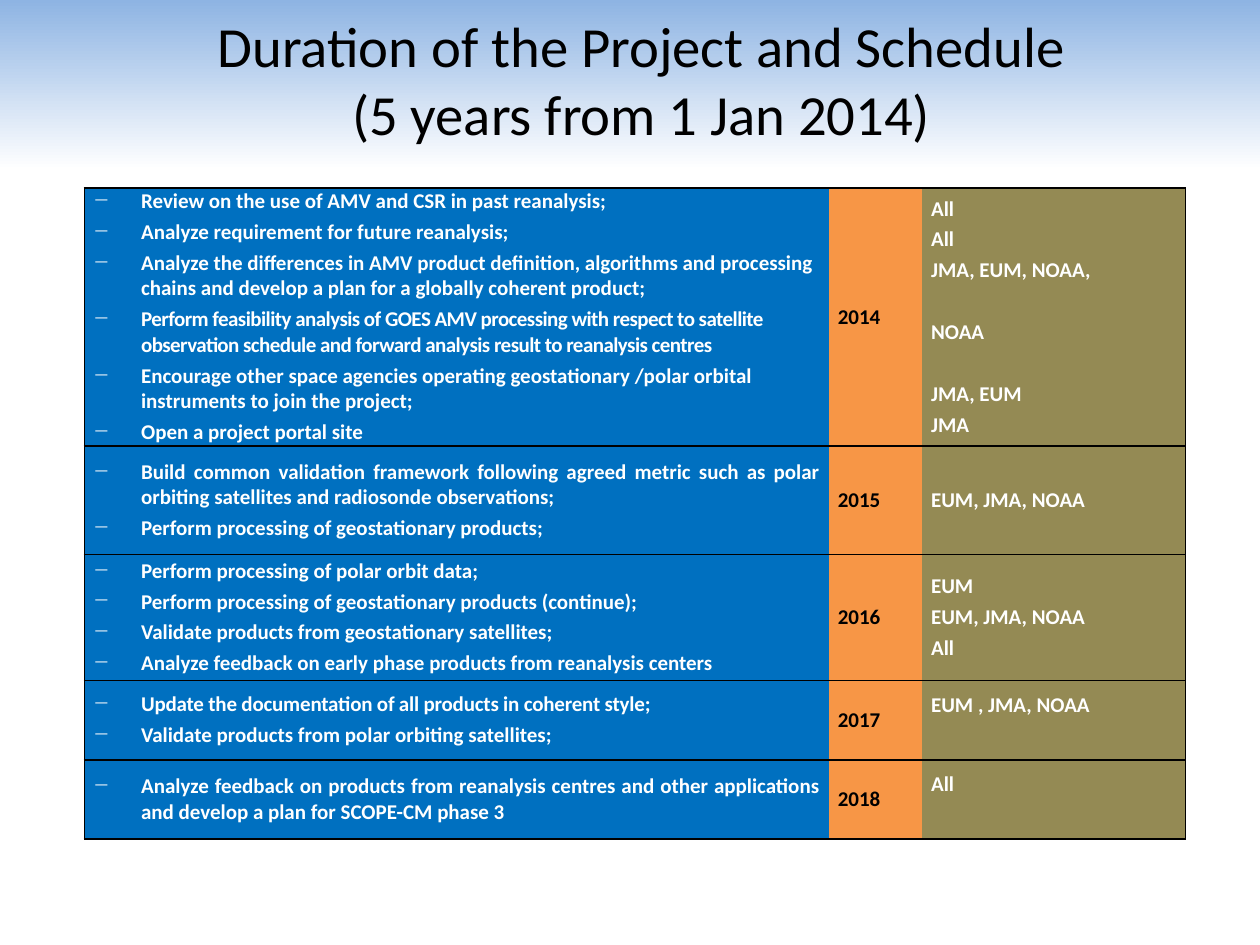
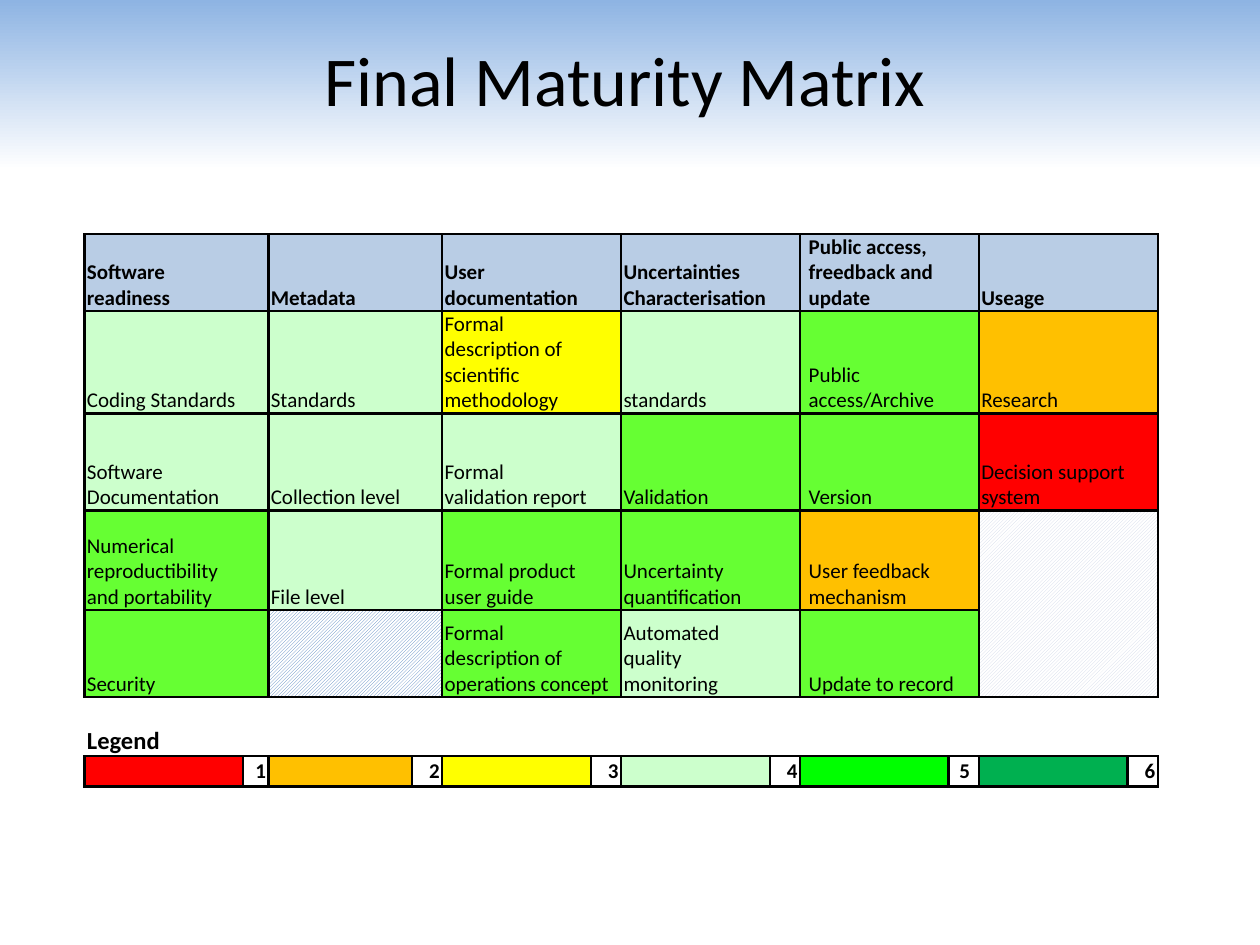
from dataclasses import dataclass

from lxml.etree import SubElement
from copy import deepcopy
from pptx import Presentation
from pptx.dml.color import RGBColor
from pptx.enum.dml import MSO_PATTERN as Pattern
from pptx.enum.text import MSO_ANCHOR as Anchor, MSO_AUTO_SIZE as AutoSize, PP_ALIGN as Align
from pptx.oxml import parse_xml
from pptx.oxml.ns import nsdecls, qn
from pptx.util import Emu, Inches, Pt

WIDTH, HEIGHT = Inches(10), Inches(7.5)
COLUMNS, ROWS = 1000, 750
NO_STYLE = "{2D5ABB26-0587-4C30-8999-92F81FD0307C}"


@dataclass(frozen=True)
class Theme:
    font: str = "Calibri"
    black: str = "000000"
    white: str = "FFFFFF"
    sky: str = "8EB4E3"
    task: str = "0070C0"
    year: str = "F79646"
    agency: str = "948A54"
    header: str = "B9CDE5"
    high: str = "66FF33"
    pale_hatch: str = "D0D8E8"
    blue_hatch: str = "4F81BD"
    levels: tuple = ("FF0000", "FFC000", "FFFF00", "CCFFCC", "00FF00", "00B050")
    body: float = 12
    legend: float = 14
    schedule_title: float = 32.4
    matrix_title: float = 40
    gap: float = 3
    skipped_line: float = 20.65


THEME = Theme()


@dataclass(frozen=True)
class Line:
    text: str
    before: float = THEME.gap
    tracking: int = 0


SCHEDULE = [
    ("2014", 205,
     [Line("Review on the use of AMV and CSR in past reanalysis;"),
      Line("Analyze requirement for future reanalysis;"),
      Line("Analyze the differences in AMV product definition, algorithms and processing "
           "chains and develop a plan for a globally coherent product;"),
      Line("Perform feasibility analysis of GOES AMV processing with respect to satellite "
           "observation schedule and forward analysis result to reanalysis centres", tracking=-30),
      Line("Encourage other space agencies operating geostationary /polar orbital "
           "instruments to join the project;"),
      Line("Open a project portal site")],
     [Line("All"), Line("All"), Line("JMA, EUM, NOAA,"),
      Line("NOAA", THEME.skipped_line), Line("JMA, EUM", THEME.skipped_line), Line("JMA")], 0),
    ("2015", 86,
     [Line("Build common validation framework following agreed metric such as polar "
           "orbiting satellites and radiosonde observations;"),
      Line("Perform processing of geostationary products;")],
     [Line("EUM, JMA, NOAA")], 0),
    ("2016", 100,
     [Line("Perform processing of polar orbit data;"),
      Line("Perform processing of geostationary products (continue);"),
      Line("Validate products from geostationary satellites;"),
      Line("Analyze feedback on early phase products from reanalysis centers")],
     [Line("EUM"), Line("EUM, JMA, NOAA"), Line("All")], 0),
    ("2017", 63,
     [Line("Update the documentation of all products in coherent style;", tracking=-10),
      Line("Validate products from polar orbiting satellites;")],
     [Line("EUM , JMA, NOAA")], 24),
    ("2018", 63,
     [Line("Analyze feedback on products from reanalysis centres and other applications "
           "and develop a plan for SCOPE-CM phase 3")],
     [Line("All")], 24),
]

RED, ORANGE, YELLOW, PALE = THEME.levels[:4]
GREEN = THEME.high
MATRIX = [
    [(name, THEME.header) for name in (
        "Software\vreadiness", "Metadata", "User documentation",
        "Uncertainties Characterisation", "Public access, freedback and update", "Useage")],
    [("Coding Standards", PALE), ("Standards", PALE),
     ("Formal\vdescription of scientific methodology", YELLOW), ("standards", PALE),
     ("Public access/Archive", GREEN), ("Research", ORANGE)],
    [("Software Documentation", PALE), ("Collection level", PALE),
     ("Formal\vvalidation report", PALE), ("Validation", GREEN),
     ("Version", GREEN), ("Decision support system", RED)],
    [("Numerical reproductibility\vand portability", GREEN), ("File level", PALE),
     ("Formal product\vuser guide", GREEN), ("Uncertainty quantification", GREEN),
     ("User feedback mechanism", ORANGE), None],
    [("Security", GREEN), None,
     ("Formal\vdescription of operations concept", GREEN),
     ("Automated\vquality\vmonitoring", PALE), ("Update to record", GREEN), None],
]
HATCHES = {
    (3, 5): (Pattern.DARK_UPWARD_DIAGONAL, THEME.pale_hatch, "LRT"),
    (4, 5): (Pattern.DARK_UPWARD_DIAGONAL, THEME.pale_hatch, "LRB"),
    (4, 1): (Pattern.LIGHT_UPWARD_DIAGONAL, THEME.blue_hatch, "LRTB"),
}


def across(columns):
    return Emu(WIDTH * columns // COLUMNS)


def down(rows):
    return Emu(HEIGHT * rows // ROWS)


def color_of(code):
    return RGBColor.from_string(code)


def write(frame, text, size=THEME.body, color=THEME.black, bold=False, align=Align.LEFT,
          before=0, tracking=0, bullet=None):
    para = frame.paragraphs[0]
    if para.runs:
        para = frame.add_paragraph()
        para.space_before = Pt(before)
    para.alignment = align
    if bullet:
        settings = para._p.get_or_add_pPr()
        settings.set("marL", str(across(38)))
        settings.set("indent", str(-across(38)))
        SubElement(settings, qn("a:buChar")).set("char", bullet)
    for number, part in enumerate(text.split("\v")):
        if number:
            para.add_line_break()
        span = para.add_run()
        span.text = part
        span.font.name, span.font.size, span.font.bold = THEME.font, Pt(size), bold
        span.font.color.rgb = color_of(color)
        if tracking:
            span._r.get_or_add_rPr().set("spc", str(tracking))


def paint_background(deck):
    fill = deck.slide_master.background.fill
    fill.gradient()
    fill.gradient_angle = 270
    stops = fill._fill._gradFill.gsLst
    stops.append(deepcopy(stops[-1]))
    for stop, color, position in zip(
            fill.gradient_stops, (THEME.sky, THEME.white, THEME.white), (0, 0.18, 1)):
        stop.color.rgb = color_of(color)
        stop.position = position


def add_page(deck, title, size, left):
    page = deck.slides.add_slide(deck.slide_layouts[5])
    box = page.shapes.title
    box.left, box.top, box.width, box.height = across(left), 0, across(900), down(125)
    frame = box.text_frame
    frame.word_wrap = True
    frame.auto_size = AutoSize.NONE
    frame.vertical_anchor = Anchor.MIDDLE
    write(frame, title, size=size, align=Align.CENTER)
    return page


def add_grid(page, left, top, widths, heights):
    frame = page.shapes.add_table(len(heights), len(widths), across(left), down(top),
                                  across(sum(widths)), down(sum(heights)))
    table = frame.table
    table.first_row = table.horz_banding = False
    table._tbl.tblPr.find(qn("a:tableStyleId")).text = NO_STYLE
    for column, width in zip(table.columns, widths):
        column.width = across(width)
    for row, height in zip(table.rows, heights):
        row.height = down(height)
    return table


def format_cell(cell, edges, line, fill=None, inset=2, bottom=0, anchor=Anchor.MIDDLE):
    cell.margin_left = cell.margin_right = across(inset)
    cell.margin_top, cell.margin_bottom = 0, down(bottom)
    cell.vertical_anchor = anchor
    if fill:
        cell.fill.solid()
        cell.fill.fore_color.rgb = color_of(fill)
    else:
        cell.fill.background()
    settings = cell._tc.get_or_add_tcPr()
    for place, edge in enumerate("LRTB"):
        paint = (f'<a:solidFill><a:srgbClr val="{THEME.black}"/></a:solidFill>'
                 if edge in edges else "<a:noFill/>")
        settings.insert(place, parse_xml(
            f'<a:ln{edge} {nsdecls("a")} w="{Pt(line)}">{paint}</a:ln{edge}>'))
    ending = cell.text_frame.paragraphs[0]._p.get_or_add_endParaRPr()
    ending.set("sz", str(int(THEME.body * 100)))


def hatch(cell, pattern, color):
    cell.fill.patterned()
    cell.fill.pattern = pattern
    cell.fill.fore_color.rgb = color_of(color)
    cell.fill.back_color.rgb = color_of(THEME.white)


def add_schedule(page):
    table = add_grid(page, 67, 149, (591, 74, 209), [height for _, height, *_ in SCHEDULE])
    for row, (year, _, tasks, agencies, bottom) in enumerate(SCHEDULE):
        task_align = Align.JUSTIFY if row else Align.LEFT
        parts = (
            (tasks, THEME.task, THEME.white, "LTB", 0, "−", task_align),
            ([Line(year)], THEME.year, THEME.black, "TB", 0, None, Align.JUSTIFY),
            (agencies, THEME.agency, THEME.white, "RTB", bottom, None, Align.JUSTIFY),
        )
        for column, (lines, fill, color, edges, room, bullet, align) in enumerate(parts):
            cell = table.cell(row, column)
            format_cell(cell, edges, 1, fill, inset=7, bottom=room)
            for line in lines:
                write(cell.text_frame, line.text, color=color, bold=True, align=align,
                      before=line.before, tracking=line.tracking, bullet=bullet)


def add_pair(table, row, topic, edges, fill, inset):
    cell, partner = table.cell(row, 2 * topic), table.cell(row, 2 * topic + 1)
    for half in (cell, partner):
        format_cell(half, edges, 1.5, fill, inset, anchor=Anchor.BOTTOM)
    cell.merge(partner)
    return cell


def add_matrix(page):
    widths = (126, 20, 114, 24) + (118, 24) * 4
    table = add_grid(page, 67, 186, widths, (59, 78, 77, 79, 69, 47, 24))
    legend_row = len(MATRIX)
    for topic, level_color in enumerate(THEME.levels):
        inset = 7 if topic == 4 else 2
        for row, entries in enumerate(MATRIX):
            if entries[topic]:
                text, fill = entries[topic]
                cell = add_pair(table, row, topic, "LRTB", fill, inset)
                write(cell.text_frame, text, bold=row == 0)
            else:
                pattern, color, edges = HATCHES[row, topic]
                hatch(add_pair(table, row, topic, edges, None, inset), pattern, color)
        heading = add_pair(table, legend_row, topic, "TB", None, inset)
        if topic == 0:
            write(heading.text_frame, "Legend", size=THEME.legend, bold=True)
        format_cell(table.cell(legend_row + 1, 2 * topic), "LRTB", 1.5, level_color)
        number = table.cell(legend_row + 1, 2 * topic + 1)
        format_cell(number, "LRTB", 1.5, inset=inset)
        write(number.text_frame, str(topic + 1), bold=True, align=Align.RIGHT)


def main():
    deck = Presentation()
    deck.slide_width, deck.slide_height = WIDTH, HEIGHT
    paint_background(deck)
    add_schedule(add_page(deck, "Duration of the Project and Schedule\v(5 years from 1 Jan 2014)",
                          THEME.schedule_title, 59))
    add_matrix(add_page(deck, "Final Maturity Matrix", THEME.matrix_title, 46))
    deck.save("out.pptx")


if __name__ == "__main__":
    main()
